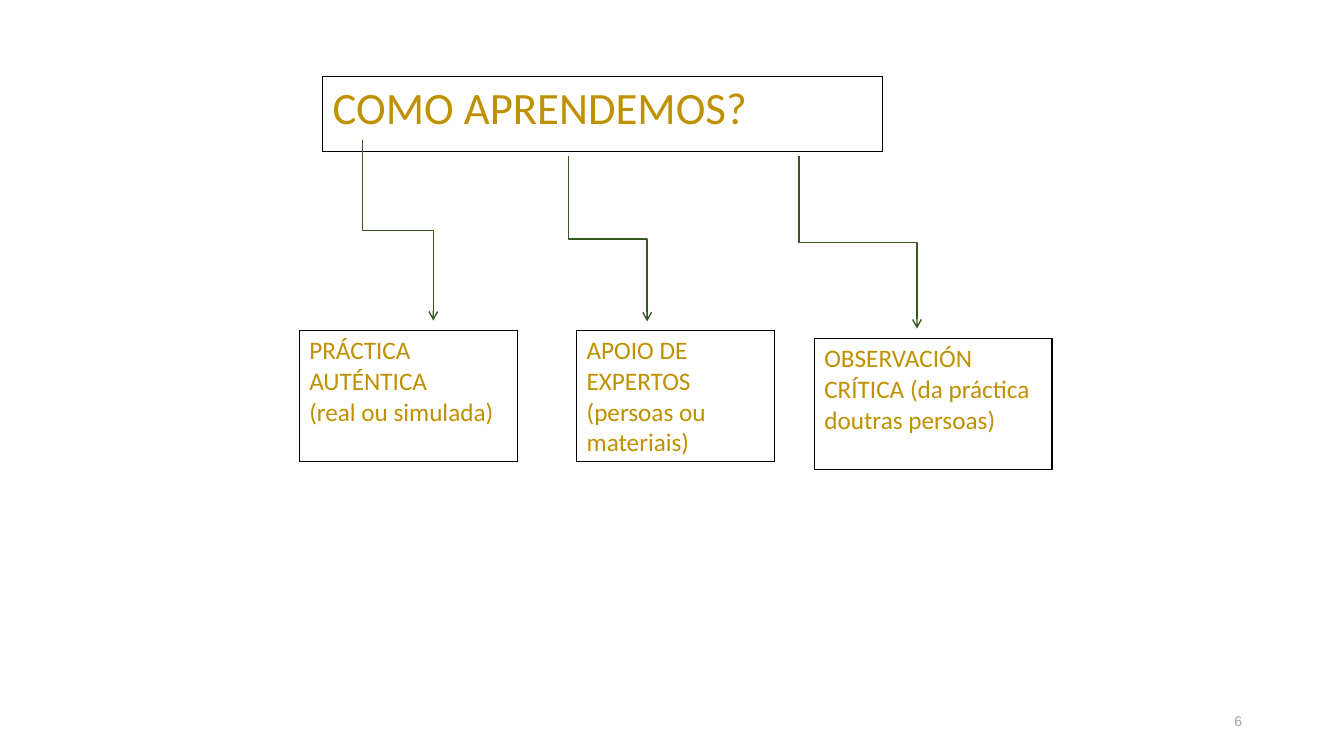
from dataclasses import dataclass

from lxml import etree
from pptx import Presentation
from pptx.dml.color import RGBColor
from pptx.enum.shapes import MSO_CONNECTOR
from pptx.enum.text import MSO_ANCHOR, PP_ALIGN
from pptx.oxml.ns import qn
from pptx.slide import Slide
from pptx.text.text import _Paragraph
from pptx.util import Cm, Pt

ELBOW = MSO_CONNECTOR.ELBOW
MIDDLE = MSO_ANCHOR.MIDDLE
RIGHT = PP_ALIGN.RIGHT
BLANK = 6


@dataclass(frozen=True)
class Theme:
    face: str = "Calibri"
    num_face: str = "Arial"
    gold: str = "BF9000"
    green: str = "385723"
    grey: str = "A7A399"
    black: str = "000000"
    white: str = "FFFFFF"
    head: int = 32
    body: int = 18
    small: int = 10
    line: int = 1


@dataclass(frozen=True)
class Box:
    left: float
    top: float
    width: float
    height: float
    size: int
    lines: tuple[str, ...]


@dataclass(frozen=True)
class Arrow:
    x1: float
    y1: float
    x2: float
    y2: float


THEME = Theme()

# Lengths in centimetres
BOXES = (
    Box(8.13, 1.93, 14.1, 1.88, THEME.head, ("COMO APRENDEMOS?",)),
    Box(7.54, 8.33, 5.51, 3.3, THEME.body,
        ("PRÁCTICA AUTÉNTICA", "(real ou simulada)")),
    Box(14.53, 8.33, 4.98, 3.3, THEME.body,
        ("APOIO DE EXPERTOS", "(persoas ou materiais)")),
    Box(20.52, 8.53, 5.99, 3.3, THEME.body,
        ("OBSERVACIÓN CRÍTICA (da práctica doutras persoas)",)),
)
ARROWS = (
    Arrow(9.14, 3.53, 10.92, 8.08),
    Arrow(14.33, 3.94, 16.31, 8.1),
    Arrow(20.14, 3.94, 23.11, 8.28),
)


def style(para: _Paragraph, face: str, size: int, color: str) -> None:
    para.font.name = face
    para.font.size = Pt(size)
    para.font.color.rgb = RGBColor.from_string(color)


def draw_box(slide: Slide, box: Box) -> None:
    frame = slide.shapes.add_table(1, 1, Cm(box.left), Cm(box.top),
                                   Cm(box.width), Cm(box.height))
    table = frame.table
    table.first_row = table.horz_banding = False
    cell = table.cell(0, 0)
    cell.fill.solid()
    cell.fill.fore_color.rgb = RGBColor.from_string(THEME.white)
    cell.text = "\n".join(box.lines)
    for para in cell.text_frame.paragraphs:
        style(para, THEME.face, box.size, THEME.gold)

    # Borders come before the fill in the cell properties
    props = cell._tc.get_or_add_tcPr()
    for spot, side in enumerate(("a:lnL", "a:lnR", "a:lnT", "a:lnB")):
        edge = etree.Element(qn(side), w=str(Pt(THEME.line)))
        fill = etree.SubElement(edge, qn("a:solidFill"))
        etree.SubElement(fill, qn("a:srgbClr"), val=THEME.black)
        props.insert(spot, edge)


def draw_arrow(slide: Slide, arrow: Arrow) -> None:
    # A quarter turn about the centre makes the elbow start downwards
    mid_x, mid_y = (arrow.x1 + arrow.x2) / 2, (arrow.y1 + arrow.y2) / 2
    half_x, half_y = (arrow.x2 - arrow.x1) / 2, (arrow.y2 - arrow.y1) / 2
    link = slide.shapes.add_connector(
        ELBOW, Cm(mid_x + half_y), Cm(mid_y - half_x),
        Cm(mid_x - half_y), Cm(mid_y + half_x))
    link.line.color.rgb = RGBColor.from_string(THEME.green)
    link.line.width = Pt(THEME.line)
    props = link._element.spPr
    props.find(qn("a:xfrm")).set("rot", str(270 * 60000))
    etree.SubElement(props.find(qn("a:ln")), qn("a:tailEnd"), type="arrow")
    etree.SubElement(props, qn("a:effectLst"))


def draw_number(slide: Slide, text: str) -> None:
    frame = slide.shapes.add_textbox(Cm(23.93), Cm(17.65),
                                     Cm(7.62), Cm(1.02)).text_frame
    frame.word_wrap = True
    frame.vertical_anchor = MIDDLE
    frame.text = text
    para = frame.paragraphs[0]
    para.alignment = RIGHT
    style(para, THEME.num_face, THEME.small, THEME.grey)


def main() -> None:
    deck = Presentation()
    deck.slide_width, deck.slide_height = Cm(33.87), Cm(19.05)
    slide = deck.slides.add_slide(deck.slide_layouts[BLANK])

    draw_number(slide, "6")
    for box in BOXES:
        draw_box(slide, box)
    for arrow in ARROWS:
        draw_arrow(slide, arrow)

    deck.save("out.pptx")


if __name__ == "__main__":
    main()
